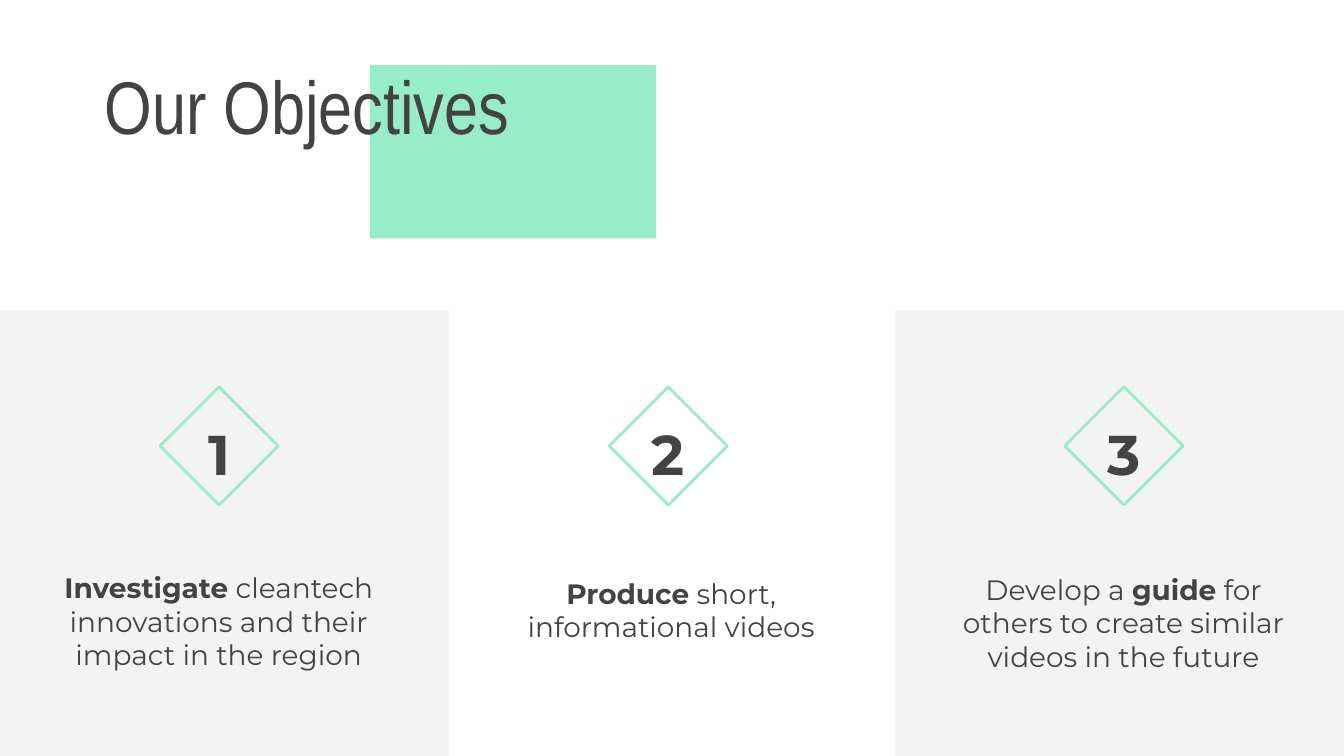
"""Builds the "Our Objectives" slide with three numbered columns."""
from dataclasses import dataclass

from pptx import Presentation
from pptx.dml.color import RGBColor
from pptx.enum.shapes import MSO_SHAPE
from pptx.enum.text import MSO_ANCHOR, PP_ALIGN
from pptx.util import Cm, Pt

RECT = MSO_SHAPE.RECTANGLE
TOP = MSO_ANCHOR.TOP
LEFT, CENTER = PP_ALIGN.LEFT, PP_ALIGN.CENTER


@dataclass(frozen=True)
class Theme:
    text: RGBColor = RGBColor(0x43, 0x43, 0x43)
    accent: RGBColor = RGBColor(0x96, 0xED, 0xC7)
    panel: RGBColor = RGBColor(0xF3, 0xF3, 0xF3)
    title_font: str = "Arial Narrow"
    body_font: str = "Montserrat"
    title_size: Pt = Pt(40)
    number_size: Pt = Pt(30)
    body_size: Pt = Pt(15)


THEME = Theme()
PANEL_W, PANEL_TOP = 8.48, 5.87
SLIDE_W, SLIDE_H = 25.4, 14.29
DIAMOND, DIAMOND_Y = 1.58, 8.43
NUMBER_BOX, NUMBER_Y = 2.24, 8.61

OBJECTIVES = [
    (4.14, (0.81, 10.54, 6.65, 2.72),
     [("Investigate", True),
      (" cleantech innovations and their impact in the region", False)]),
    (12.63, (9.65, 10.64, 6.07, 2.24),
     [("Produce", True), (" short, informational videos", False)]),
    (21.24, (17.73, 10.57, 7.01, 2.41),
     [("Develop a ", False), ("guide", True),
      (" for others to create similar videos in the future", False)]),
]


def square(cx, cy, side):
    return cx - side / 2, cy - side / 2, side, side


def add_rect(s, box, fill=None, line=None, width=0.75, rotation=0):
    sp = s.shapes.add_shape(RECT, *map(Cm, box))
    sp.shadow.inherit = False
    sp.rotation = rotation
    if fill is None:
        sp.fill.background()
    else:
        sp.fill.solid()
        sp.fill.fore_color.rgb = fill
    if line is None:
        sp.line.fill.background()
    else:
        sp.line.color.rgb = line
        sp.line.width = Pt(width)


def add_text(s, box, runs, font, size, align=CENTER, spacing=1.0, after=16):
    tf = s.shapes.add_textbox(*map(Cm, box)).text_frame
    tf.word_wrap = True
    tf.vertical_anchor = TOP
    tf.margin_left = tf.margin_right = Cm(0.25)
    tf.margin_top = tf.margin_bottom = Cm(0.25)
    p = tf.paragraphs[0]
    p.alignment = align
    p.line_spacing = spacing
    p.space_after = Pt(after)
    p.font.name = font
    p.font.size = size
    p.font.color.rgb = THEME.text
    for text, bold in runs:
        r = p.add_run()
        r.text = text
        r.font.bold = bold


def add_objective(s, number, cx, body_box, runs):
    add_rect(s, square(cx, DIAMOND_Y, DIAMOND), line=THEME.accent, width=1.5,
             rotation=45)
    add_text(s, square(cx, NUMBER_Y, NUMBER_BOX), [(str(number), True)],
             THEME.body_font, THEME.number_size, spacing=1.15)
    add_text(s, body_box, runs, THEME.body_font, THEME.body_size)


def main():
    prs = Presentation()
    prs.slide_width, prs.slide_height = Cm(SLIDE_W), Cm(SLIDE_H)
    s = prs.slides.add_slide(prs.slide_layouts[6])
    for left in (0, SLIDE_W - PANEL_W):
        add_rect(s, (left, PANEL_TOP, PANEL_W, SLIDE_H - PANEL_TOP),
                 THEME.panel, THEME.panel)
    add_rect(s, (6.99, 1.23, 5.41, 3.28), THEME.accent)
    add_text(s, (1.73, 0.89, 9.45, 3.48), [("Our Objectives", False)],
             THEME.title_font, THEME.title_size, LEFT, after=0)
    for number, (cx, body_box, runs) in enumerate(OBJECTIVES, 1):
        add_objective(s, number, cx, body_box, runs)
    prs.save("out.pptx")


if __name__ == "__main__":
    main()
